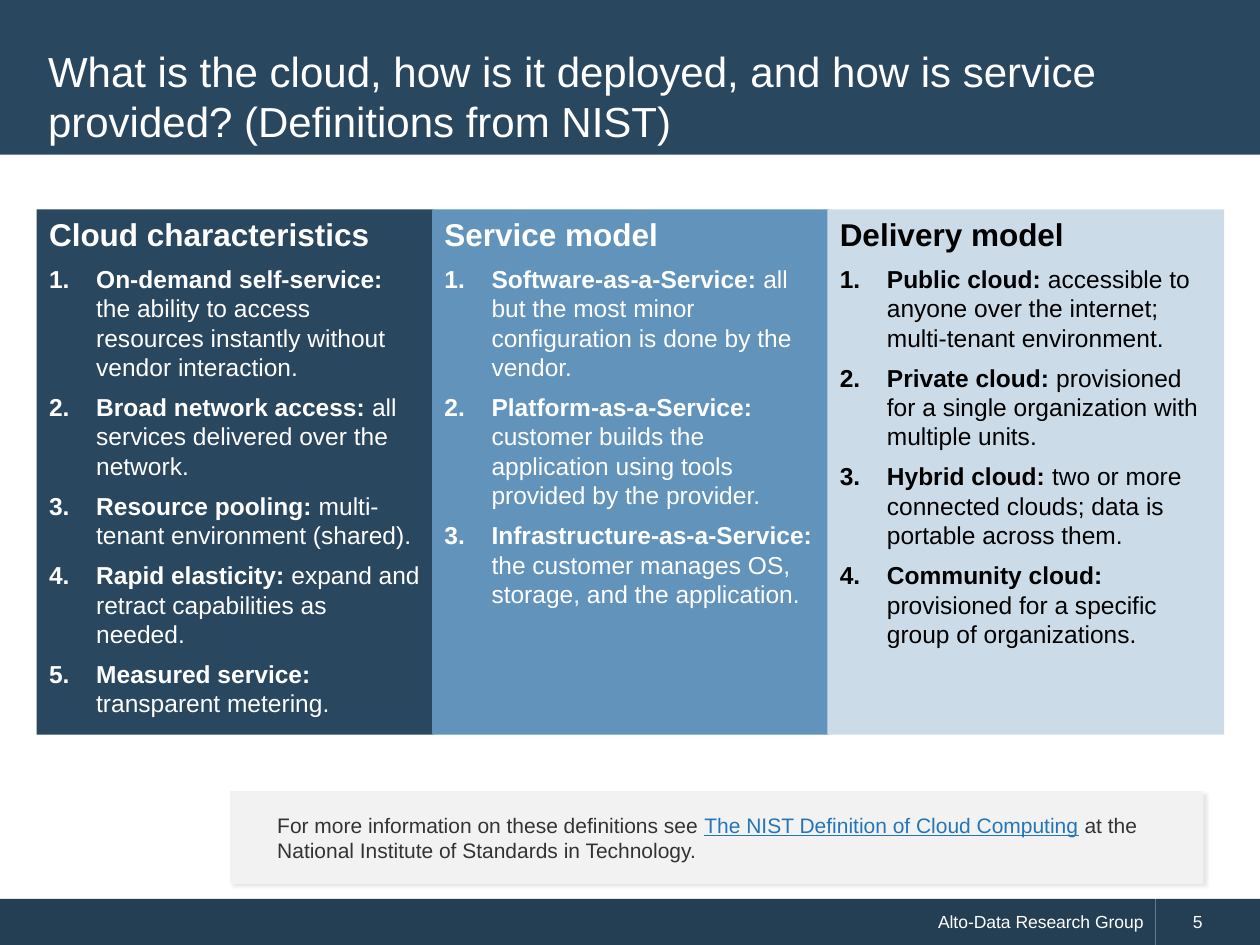
"""Build the slide that defines cloud traits, services and delivery."""
from lxml import etree
from pptx import Presentation
from pptx import util as u
from pptx.dml.color import RGBColor
from pptx.enum import shapes, text
from pptx.oxml import ns

WHITE, BLACK, NAVY = "FFFFFF", "000000", "29475F"
TITLE = ("What is the cloud, how is it deployed, and how is service "
         "provided? (Definitions from NIST)")
COLS = [
    ("Cloud characteristics", NAVY, WHITE, [
        ("On-demand self-service:", " the ability to access resources "
         "instantly without vendor interaction."),
        ("Broad network access: ", "all services delivered over the network."),
        ("Resource pooling: ", "multi-tenant environment (shared)."),
        ("Rapid elasticity: ", "expand and retract capabilities as needed."),
        ("Measured service: ", "transparent metering."),
    ]),
    ("Service model", "6294BB", WHITE, [
        ("Software-as-a-Service: ",
         "all but the most minor configuration is done by the vendor."),
        ("Platform-as-a-Service: ", "customer builds the application using "
         "tools provided by the provider."),
        ("Infrastructure-as-a-Service: ",
         "the customer manages OS, storage, and the application."),
    ]),
    ("Delivery model", "CBDBE8", BLACK, [
        ("Public cloud: ",
         "accessible to anyone over the internet; multi-tenant environment."),
        ("Private cloud: ",
         "provisioned for a single organization with multiple units."),
        ("Hybrid cloud: ",
         "two or more connected clouds; data is portable across them."),
        ("Community cloud: ",
         "provisioned for a specific group of organizations."),
    ]),
]
NOTE = [
    ("For more information on these definitions see ", "333333", False),
    ("The NIST Definition of Cloud Computing", "2576B7", True),
    (" at the National Institute of Standards in Technology.", "333333", False),
]
FOOT = [
    ("Alto-Data Research Group", 0, 23.3, 0.74, text.PP_ALIGN.RIGHT),
    ("5", 23.3, 2.1, 0.5, text.PP_ALIGN.LEFT),
]
LEFT, STEP, WIDE = 0.74, 7.97, 8


def tint(code):
    return RGBColor.from_string(code)


def box(slide, at, fill, mid=True):
    shape = slide.shapes.add_shape(shapes.MSO_SHAPE.RECTANGLE,
                                   *[u.Cm(n) for n in at])
    shape.shadow.inherit = False
    shape.fill.solid()
    shape.fill.fore_color.rgb = tint(fill)
    shape.line.fill.background()
    frame = shape.text_frame
    frame.word_wrap = True
    frame.vertical_anchor = (text.MSO_ANCHOR.MIDDLE if mid
                             else text.MSO_ANCHOR.TOP)
    frame.paragraphs[0].alignment = text.PP_ALIGN.LEFT
    return shape


def say(para, words, size, ink, bold=False, line=False):
    run = para.add_run()
    run.text = words
    font = run.font
    font.name, font.size, font.bold = "Arial", u.Pt(size), bold
    font.underline = line
    font.color.rgb = tint(ink)


def indent(para, left, first=0):
    props = para._p.get_or_add_pPr()
    props.set("marL", str(u.Cm(left)))
    props.set("indent", str(u.Cm(first)))
    return props


def shade(shape):
    glow = etree.SubElement(
        shape._element.spPr.find(ns.qn("a:effectLst")), ns.qn("a:outerShdw"),
        blurRad=str(u.Pt(2)), dist=str(u.Pt(2)), dir="2700000",
        algn="tl", rotWithShape="0")
    ink = etree.SubElement(glow, ns.qn("a:srgbClr"), val=BLACK)
    etree.SubElement(ink, ns.qn("a:alpha"), val="10000")


def column(slide, spot, head, fill, ink, items):
    at = (LEFT + spot * STEP, 4.22, WIDE, 10.59)
    frame = box(slide, at, fill, mid=False).text_frame
    para = frame.paragraphs[0]
    para.space_after = u.Pt(6)
    say(para, head, 18, ink, bold=True)
    for term, gloss in items:
        para = frame.add_paragraph()
        para.alignment = text.PP_ALIGN.LEFT
        para.space_after = u.Pt(6)
        props = indent(para, 0.95, -0.95)
        etree.SubElement(props, ns.qn("a:buFont"), typeface="+mj-lt")
        etree.SubElement(props, ns.qn("a:buAutoNum"), type="arabicPeriod")
        say(para, term, 14, ink, bold=True)
        say(para, gloss, 14, ink)


def main():
    deck = Presentation()
    deck.slide_width, deck.slide_height = u.Cm(25.4), u.Cm(19.05)
    slide = deck.slides.add_slide(deck.slide_layouts[6])

    for words, left, wide, inset, align in FOOT:
        shape = box(slide, (left, 18.12, wide, 0.93), "243F54")
        para = shape.text_frame.paragraphs[0]
        para.alignment = align
        indent(para, inset)
        say(para, words, 10, WHITE)

    box(slide, (0, 0, 25.4, 3.12), NAVY)
    frame = slide.shapes.add_textbox(
        u.Cm(0.72), u.Cm(0.72), u.Cm(23.95), u.Cm(2.43)).text_frame
    frame.word_wrap = True
    frame.vertical_anchor = text.MSO_ANCHOR.MIDDLE
    say(frame.paragraphs[0], TITLE, 24, WHITE)

    for spot, col in enumerate(COLS):
        column(slide, spot, *col)

    note = box(slide, (4.64, 15.95, 19.62, 1.87), "F2F2F2")
    shade(note)
    para = note.text_frame.paragraphs[0]
    indent(para, 0.7)
    for words, ink, line in NOTE:
        say(para, words, 12, ink, line=line)
    deck.save("out.pptx")


if __name__ == "__main__":
    main()
